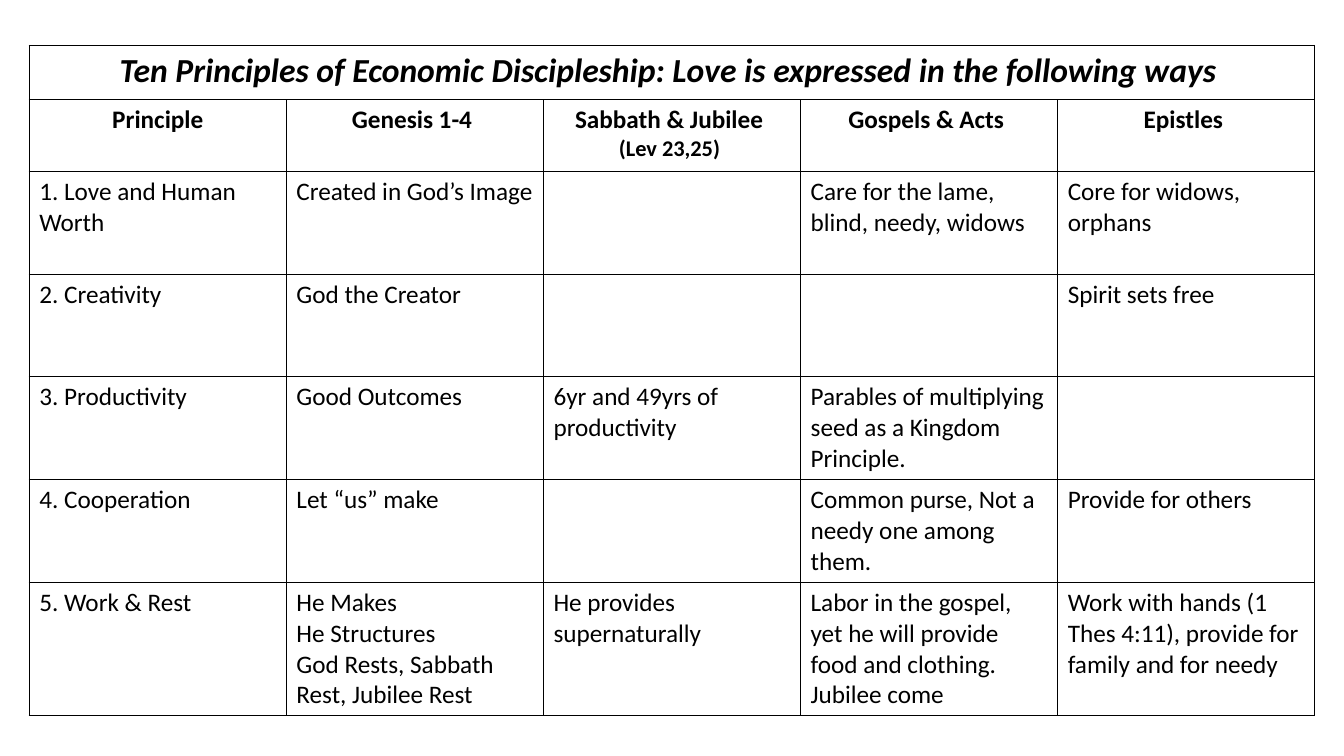
from lxml.etree import SubElement
from pptx import Presentation
from pptx.dml.color import RGBColor as Color
from pptx.enum.text import PP_ALIGN as Align
from pptx.oxml.ns import qn
from pptx.util import Emu, Pt

PX = 9144
COLOURS = {"ink": "000000", "paper": "FFFFFF"}
COLUMN_WIDTH = 255
ROW_HEIGHTS = [54, 71, 102, 102, 102, 102, 132]
TITLE = "Ten Principles of Economic Discipleship: Love is expressed in the following ways "
HEADINGS = ["Principle", "Genesis 1-4 ", "Sabbath & Jubilee \n(Lev 23,25) ", "Gospels & Acts ", "Epistles "]
PRINCIPLES = [
    ["1. Love and Human Worth", "Created in God’s Image", "",
     "Care for the lame, blind, needy, widows", "Core for widows, orphans"],
    ["2. Creativity", "God the Creator", "", "", "Spirit sets free"],
    ["3. Productivity", "Good Outcomes", "6yr and 49yrs of productivity",
     "Parables of multiplying seed as a Kingdom Principle.", ""],
    ["4. Cooperation", "Let “us” make", "",
     "Common purse, Not a needy one among them.", "Provide for others"],
    ["5. Work & Rest", "He Makes\nHe Structures\nGod Rests, Sabbath Rest, Jubilee Rest",
     "He provides supernaturally",
     "Labor in the gospel, yet he will provide food and clothing. Jubilee come",
     "Work with hands (1 Thes 4:11), provide for family and for needy"],
]
BODY = {"name": "Calibri", "size": Pt(18), "bold": False, "italic": False}
HEADING = BODY | {"bold": True}
REFERENCE = HEADING | {"size": Pt(16)}
HEADLINE = HEADING | {"size": Pt(24), "italic": True}


def px(length):
    """Turn a length in px into EMU."""
    return Emu(length * PX)


def set_font(font, style):
    """Apply a dict of format values to a font."""
    for name, value in style.items():
        setattr(font, name, value)
    font.color.rgb = Color.from_string(COLOURS["ink"])


def write_cell(cell, text, styles, align):
    """Write one paragraph per line, the last style serving any further lines."""
    cell.text = text
    for index, para in enumerate(cell.text_frame.paragraphs):
        style = styles[min(index, len(styles) - 1)]
        para.alignment = align
        set_font(para.font, style)
        for span in para.runs:
            set_font(span.font, style)


def frame_cell(cell):
    """Give a cell thin borders on all sides and a plain fill."""
    properties = cell._tc.get_or_add_tcPr()
    for side in ("a:lnL", "a:lnR", "a:lnT", "a:lnB"):
        line = SubElement(properties, qn(side), w=str(Pt(1)))
        fill = SubElement(line, qn("a:solidFill"))
        SubElement(fill, qn("a:srgbClr"), val=COLOURS["ink"])
    cell.fill.solid()
    cell.fill.fore_color.rgb = Color.from_string(COLOURS["paper"])


def add_grid(page):
    """Add the empty, framed table."""
    rows, columns = len(ROW_HEIGHTS), len(HEADINGS)
    table = page.shapes.add_table(rows, columns, px(29), px(45), px(COLUMN_WIDTH * columns),
                                  px(sum(ROW_HEIGHTS))).table
    table.first_row = table.horz_banding = False
    for column in table.columns:
        column.width = px(COLUMN_WIDTH)
    for row, height in zip(table.rows, ROW_HEIGHTS):
        row.height = px(height)
    for cell in table.iter_cells():
        frame_cell(cell)
    table.cell(0, 0).merge(table.cell(0, columns - 1))
    return table


def write_row(table, row, texts, styles, align):
    """Write the texts of one table row."""
    for column, text in enumerate(texts):
        write_cell(table.cell(row, column), text, styles, align)


def main():
    """Build the slide and save it."""
    deck = Presentation()
    deck.slide_width, deck.slide_height = px(1333), px(750)
    page = deck.slides.add_slide(deck.slide_layouts[6])
    table = add_grid(page)
    write_row(table, 0, [TITLE], [HEADLINE], Align.CENTER)
    write_row(table, 1, HEADINGS, [HEADING, REFERENCE], Align.CENTER)
    for row, texts in enumerate(PRINCIPLES, start=2):
        write_row(table, row, texts, [BODY], Align.LEFT)
    deck.save("out.pptx")


if __name__ == "__main__":
    main()
